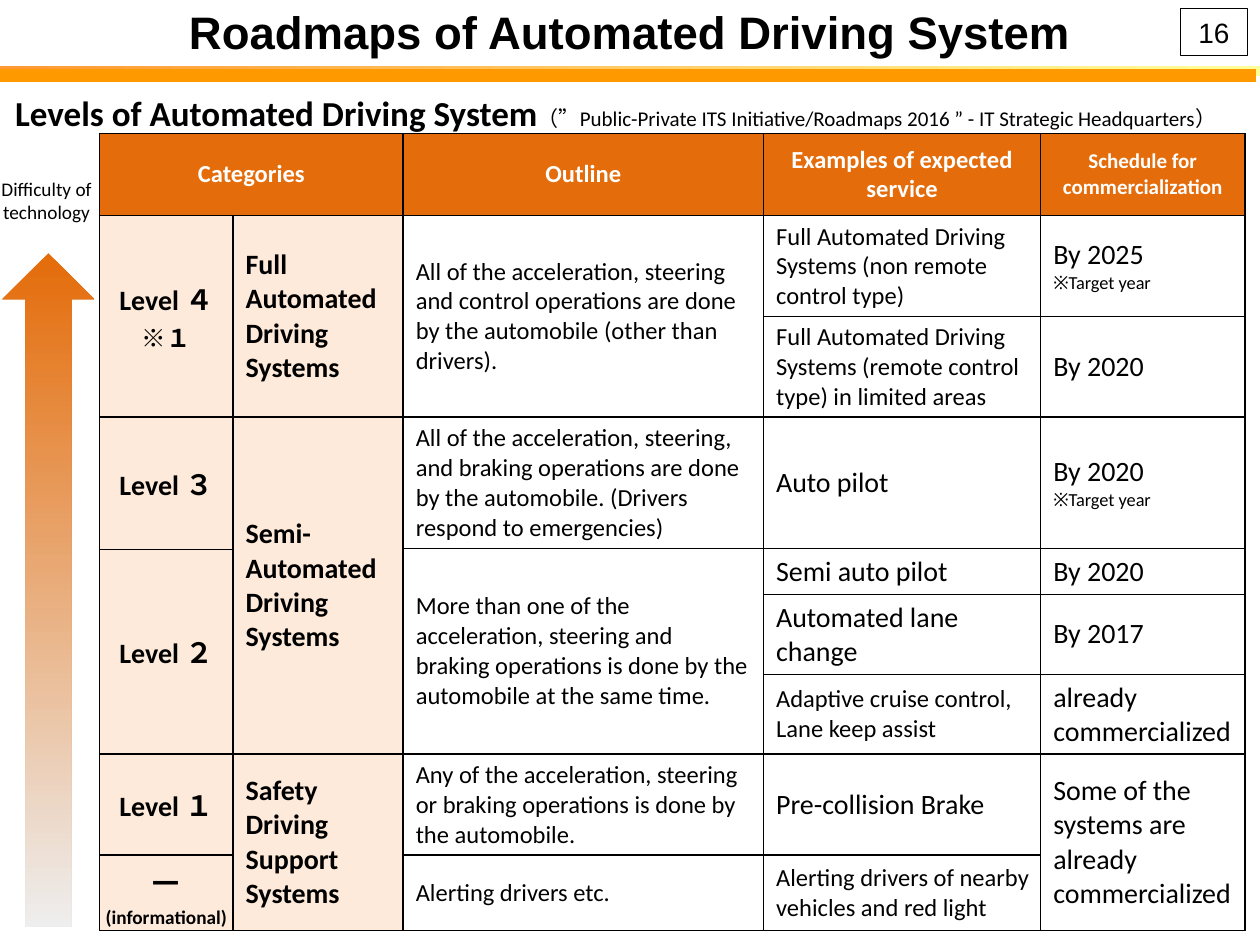
from lxml.etree import SubElement
from pptx import Presentation
from pptx.dml.color import RGBColor
from pptx.enum.shapes import MSO_CONNECTOR, MSO_SHAPE
from pptx.enum.text import MSO_ANCHOR, PP_ALIGN
from pptx.oxml import parse_xml
from pptx.oxml.ns import nsdecls, qn
from pptx.util import Inches, Pt

COLORS = {
    "black": "000000", "white": "FFFFFF", "orange": "E46C0A", "peach": "FDEADA",
    "rule": "FF9900", "strip": "FF9933", "pale": "FFFF99", "gray": "EEEEEE",
}
COLUMN_WIDTHS = [1.06, 1.35, 2.86, 2.2, 1.62]
ROW_HEIGHTS = [0.65, 0.8, 0.8, 1.04, 0.01, 0.35, 0.63, 0.63, 0.8, 0.6]
BASE = {"name": "Calibri", "size": 14, "bold": False, "color": "black"}
LEVEL = {"fill": "peach", "center": True, "size": 16, "bold": True, "margins": (0.04, 0.04, 0.04)}
BODY = {"fill": "white", "size": 14}
LARGE = {"fill": "white", "size": 16}
NARROW = {"margins": (0.1, 0.04, 0.05)}
STYLES = {
    "header": {"fill": "orange", "center": True, "size": 14, "bold": True, "color": "white"},
    "level": LEVEL,
    "note": {**LEVEL, "margins": (0.04, 0.04, 0)},
    "group": {"fill": "peach", "size": 16, "bold": True},
    "body": BODY,
    "large": LARGE,
    "narrow body": {**BODY, **NARROW},
    "narrow large": {**LARGE, **NARROW},
}
TARGET = [("※Target year", {"size": 10.5})]
CELLS = [
    (0, 0, 1, 2, "header", ["Categories"]),
    (0, 2, 1, 1, "header", ["Outline"]),
    (0, 3, 1, 1, "header", ["Examples of expected service"]),
    (0, 4, 1, 1, "header", [[("Schedule for commercialization", {"size": 12})]]),
    (1, 0, 2, 1, "level", ["Level ４", [("※１", {"size": 14, "name": "Arial"})]]),
    (1, 1, 2, 1, "group", ["Full Automated Driving Systems"]),
    (1, 2, 2, 1, "body", ["All of the acceleration, steering and control operations are done "
                          "by the automobile (other than drivers)."]),
    (1, 3, 1, 1, "body", ["Full Automated Driving Systems (non remote control type)"]),
    (1, 4, 1, 1, "large", ["By 2025", TARGET]),
    (2, 3, 1, 1, "body", ["Full Automated Driving Systems (remote control type) in limited areas"]),
    (2, 4, 1, 1, "large", ["By 2020"]),
    (3, 0, 2, 1, "level", ["Level ３"]),
    (3, 1, 5, 1, "group", ["Semi-Automated Driving Systems"]),
    (3, 2, 1, 1, "body", ["All of the acceleration, steering, and braking operations are done "
                          "by the automobile. (Drivers respond to emergencies)"]),
    (3, 3, 1, 1, "large", ["Auto pilot"]),
    (3, 4, 1, 1, "large", ["By 2020", TARGET]),
    (4, 2, 4, 1, "body", ["More than one of the acceleration, steering and braking operations "
                          "is done by the automobile at the same time."]),
    (4, 3, 2, 1, "large", ["Semi auto pilot"]),
    (4, 4, 2, 1, "large", ["By 2020"]),
    (5, 0, 3, 1, "level", ["Level ２"]),
    (6, 3, 1, 1, "large", ["Automated lane change"]),
    (6, 4, 1, 1, "large", ["By 2017"]),
    (7, 3, 1, 1, "body", ["Adaptive cruise control, Lane keep assist"]),
    (7, 4, 1, 1, "large", ["already commercialized"]),
    (8, 0, 1, 1, "level", ["Level １"]),
    (8, 1, 2, 1, "group", ["Safety Driving Support Systems"]),
    (8, 2, 1, 1, "body", ["Any of the acceleration, steering or braking operations is done "
                          "by the automobile."]),
    (8, 3, 1, 1, "narrow large", ["Pre-collision Brake"]),
    (8, 4, 2, 1, "narrow large", ["Some of the systems are already commercialized"]),
    (9, 0, 1, 1, "note", [[("－", {"size": 20}), ("(informational)", {"size": 11})]]),
    (9, 2, 1, 1, "body", ["Alerting drivers etc."]),
    (9, 3, 1, 1, "narrow body", ["Alerting drivers of nearby vehicles and red light"]),
]


def rgb(name):
    """Return the named colour."""
    return RGBColor.from_string(COLORS[name])


def write(frame, paragraphs, style):
    """Fill a text frame with paragraphs of plain text or formatted spans."""
    for index, content in enumerate(paragraphs):
        para = frame.add_paragraph() if index else frame.paragraphs[0]
        para.alignment = PP_ALIGN.CENTER if style.get("center") else PP_ALIGN.LEFT
        for text, changes in [(content, {})] if isinstance(content, str) else content:
            span = para.add_run()
            span.text = text
            values = {**BASE, **style, **changes}
            for key, value in {"name": values["name"], "size": Pt(values["size"]),
                               "bold": values["bold"]}.items():
                setattr(span.font, key, value)
            span.font.color.rgb = rgb(values["color"])


def set_margins(target, left, right, down):
    """Set the left, right, and top and bottom margins."""
    for side, value in {"left": left, "right": right, "top": down, "bottom": down}.items():
        setattr(target, f"margin_{side}", Inches(value))


def add_text(page, box, paragraphs, style, across=0.1, down=0.05, anchor=MSO_ANCHOR.MIDDLE):
    """Add a wrapped text box."""
    label = page.shapes.add_textbox(*map(Inches, box))
    frame = label.text_frame
    frame.word_wrap = True
    frame.vertical_anchor = anchor
    set_margins(frame, across, across, down)
    write(frame, paragraphs, style)
    return label


def add_gradient(page, kind, box, names, angle):
    """Add a borderless shape with a two-colour gradient."""
    shape = page.shapes.add_shape(kind, *map(Inches, box))
    shape.shadow.inherit = False
    shape.line.fill.background()
    shape.fill.gradient()
    shape.fill.gradient_angle = angle
    for position, (stop, name) in enumerate(zip(shape.fill.gradient_stops, names)):
        stop.position = position
        stop.color.rgb = rgb(name)


def add_heading(page, left, top, width):
    """Place the title, page number, double rule and subtitle."""
    add_gradient(page, MSO_SHAPE.RECTANGLE, (left, top + 0.52, width, 0.08), ("strip", "pale"), 0)
    add_text(page, (left, top + 0.03, width, 0.44), ["Roadmaps of Automated Driving System"],
             {"name": "Arial", "size": 26, "bold": True, "center": True}, 0, 0)
    rule = page.shapes.add_connector(
        MSO_CONNECTOR.STRAIGHT, Inches(left - 0.03), Inches(top + 0.6),
        Inches(left + width - 0.03), Inches(top + 0.6))
    rule.line.color.rgb = rgb("rule")
    rule.line.width = Pt(7)
    SubElement(rule._element.spPr, qn("a:effectLst"))
    number = add_text(page, (left + width - 0.63, top + 0.07, 0.53, 0.37), ["16"],
                      {"name": "Arial", "size": 16, "center": True})
    number.line.color.rgb = rgb("black")
    number.line.width = Pt(0.75)
    source = "（”Public-Private ITS Initiative/Roadmaps 2016 ” - IT Strategic Headquarters）"
    add_text(page, (left + 0.04, top + 0.67, width + 0.6, 0.44),
             [[("Levels of Automated Driving System", {"size": 20, "bold": True}),
               (source, {"size": 12})]], {}, 0.08)


def add_difficulty(page, left, top):
    """Place the difficulty label above its upward arrow."""
    add_text(page, (left - 0.11, top, 0.92, 0.66), ["Difficulty of technology"],
             {"size": 11, "center": True}, anchor=MSO_ANCHOR.TOP)
    add_gradient(page, MSO_SHAPE.UP_ARROW, (left, top + 0.65, 0.73, 5.35), ("orange", "gray"), 270)


def add_borders(cell):
    """Draw thin black lines around a cell."""
    properties = cell._tc.get_or_add_tcPr()
    for index, side in enumerate(("L", "R", "T", "B")):
        properties.insert(index, parse_xml(
            f'<a:ln{side} {nsdecls("a")} w="12700"><a:solidFill>'
            f'<a:srgbClr val="{COLORS["black"]}"/></a:solidFill></a:ln{side}>'))


def add_levels(page, left, top):
    """Place the table of automation levels."""
    table = page.shapes.add_table(
        len(ROW_HEIGHTS), len(COLUMN_WIDTHS), Inches(left), Inches(top),
        Inches(sum(COLUMN_WIDTHS)), Inches(sum(ROW_HEIGHTS))).table
    table.first_row = table.horz_banding = False
    for column, width in zip(table.columns, COLUMN_WIDTHS):
        column.width = Inches(width)
    for row, height in zip(table.rows, ROW_HEIGHTS):
        row.height = Inches(height)
    for row, column, down, across, kind, paragraphs in CELLS:
        style = STYLES[kind]
        cell = table.cell(row, column)
        if down * across > 1:
            cell.merge(table.cell(row + down - 1, column + across - 1))
        cell.vertical_anchor = MSO_ANCHOR.MIDDLE
        set_margins(cell, *style.get("margins", (0.1, 0.1, 0.05)))
        write(cell.text_frame, paragraphs, style)
        for part_row in range(row, row + down):
            for part_column in range(column, column + across):
                part = table.cell(part_row, part_column)
                part.fill.solid()
                part.fill.fore_color.rgb = rgb(style["fill"])
                add_borders(part)


def main():
    """Build and save the deck."""
    deck = Presentation()
    deck.slide_width, deck.slide_height = Inches(10), Inches(7.5)
    page = deck.slides.add_slide(deck.slide_layouts[6])
    add_heading(page, 0, 0, 10)
    add_levels(page, 0.79, 1.06)
    add_difficulty(page, 0.02, 1.36)
    deck.save("out.pptx")


if __name__ == "__main__":
    main()
